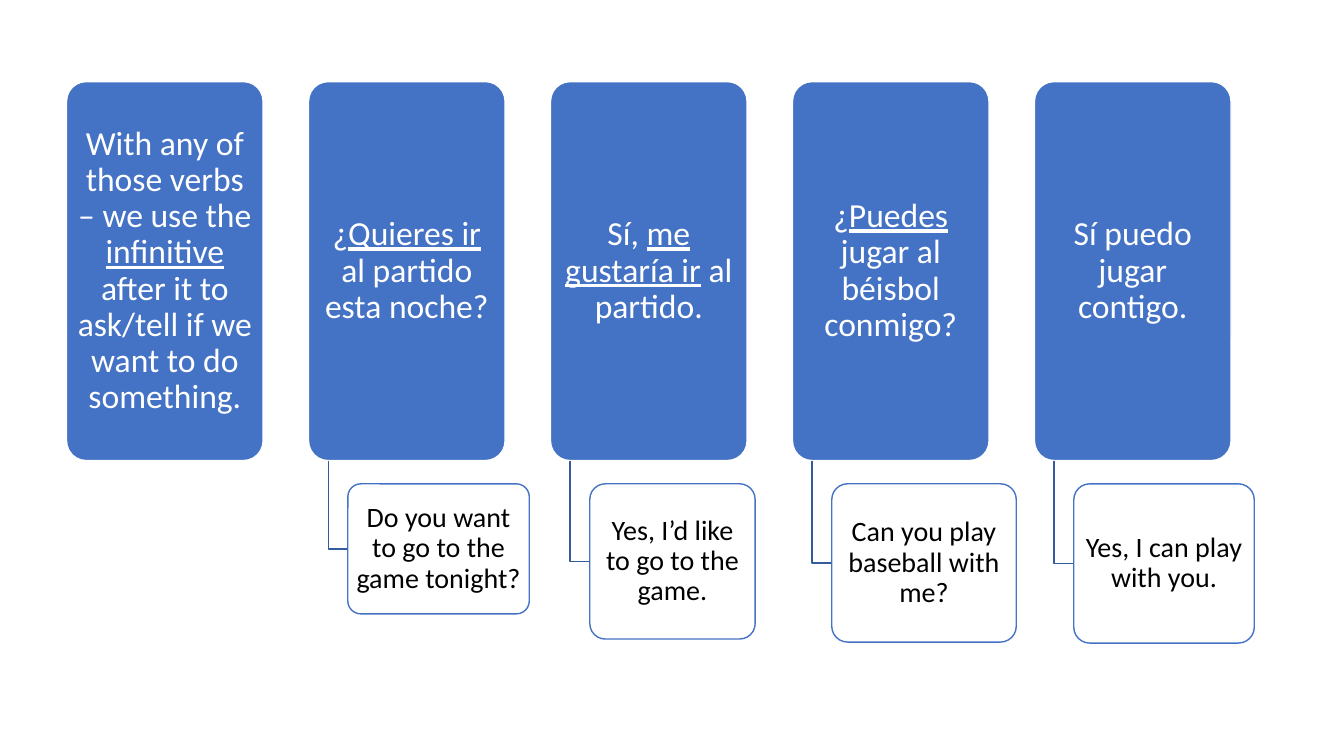
from lxml import etree
from pptx import Presentation
from pptx.dml.color import RGBColor
from pptx.enum.shapes import MSO_SHAPE
from pptx.enum.text import MSO_ANCHOR, PP_ALIGN
from pptx.oxml.ns import qn
from pptx.util import Inches, Pt

BLUE = RGBColor(0x44, 0x72, 0xC4)
DARK_BLUE = RGBColor(0x36, 0x5B, 0x9D)
WHITE = RGBColor(0xFF, 0xFF, 0xFF)
BLACK = RGBColor(0, 0, 0)

COLUMNS = [
    (["With any of those verbs – we use the", " infinitive ",
      "after it to ask/tell if we want to do something."], None),
    (["¿", "Quieres ir ", "al partido esta noche?"],
     ("Do you want to go to the game tonight?", 1.8, 1.29)),
    (["Sí, ", "me gustaría ir", " al partido."],
     ("Yes, I’d like to go to the game.", 1.64, 1.54)),
    (["¿", "Puedes", " jugar al béisbol conmigo?"],
     ("Can you play baseball with me?", 1.83, 1.57)),
    (["Sí puedo jugar contigo."],
     ("Yes, I can play with you.", 1.79, 1.58)),
]

LEFT, TOP, PITCH = 0.66, 0.81, 2.4
CARD_W, CARD_H = 1.95, 3.76
INDENT = CARD_W / 10
CARD_BOTTOM = TOP + CARD_H
ANSWER_TOP = 4.8

prs = Presentation()
prs.slide_width, prs.slide_height = Inches(13.33), Inches(7.5)
s = prs.slides.add_slide(prs.slide_layouts[6])


def write(tf, parts, size, color, inset):
    tf.word_wrap = True
    tf.vertical_anchor = MSO_ANCHOR.MIDDLE
    tf.margin_left = tf.margin_right = Inches(inset)
    tf.margin_top = tf.margin_bottom = Inches(0.03)
    p = tf.paragraphs[0]
    p.alignment = PP_ALIGN.CENTER
    p.line_spacing = 0.9
    for i, part in enumerate(parts):
        r = p.add_run()
        r.text = part
        r.font.name = "Calibri"
        r.font.size = Pt(size)
        r.font.color.rgb = color
        r.font.underline = i % 2 == 1


def add_card(x, y, w, h, fill, line):
    sp = s.shapes.add_shape(MSO_SHAPE.ROUNDED_RECTANGLE,
                            Inches(x), Inches(y), Inches(w), Inches(h))
    sp.adjustments[0] = 0.1
    sp.shadow.inherit = False
    sp.fill.solid()
    sp.fill.fore_color.rgb = fill
    sp.line.color.rgb = line
    sp.line.width = Pt(1)
    return sp


def add_elbow(x, y, end_x, end_y):
    builder = s.shapes.build_freeform(Inches(x), Inches(y))
    builder.add_line_segments([(Inches(x), Inches(end_y)),
                               (Inches(end_x), Inches(end_y))], close=False)
    sp = builder.convert_to_shape()
    sp.shadow.inherit = False
    sp.fill.background()
    sp.line.color.rgb = DARK_BLUE
    sp.line.width = Pt(1)


for col, (phrase, answer) in enumerate(COLUMNS):
    x = LEFT + col * PITCH
    card = add_card(x, TOP, CARD_W, CARD_H, BLUE, WHITE)
    write(card.text_frame, phrase, 24, WHITE, 0.05)
    if answer:
        text, w, h = answer
        answer_x = x + 2 * INDENT
        add_elbow(x + INDENT, CARD_BOTTOM, answer_x, ANSWER_TOP + h / 2)
        box = add_card(answer_x, ANSWER_TOP, w, h, WHITE, BLUE)
        color = box.fill._xPr.find(qn("a:solidFill"))[0]
        etree.SubElement(color, qn("a:alpha")).set("val", "90000")
        write(box.text_frame, [text], 20, BLACK, 0.04)

prs.save("out.pptx")
